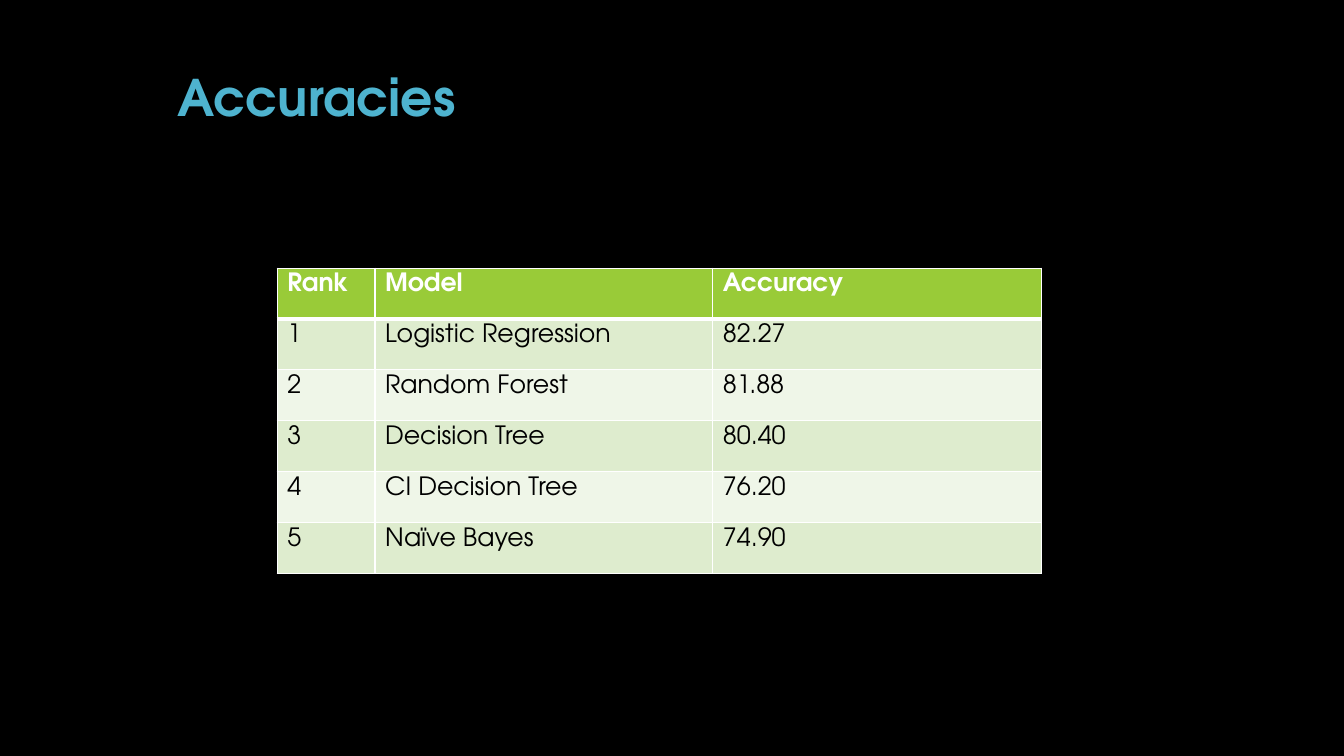
from dataclasses import dataclass

from lxml import etree
from pptx import Presentation
from pptx.dml.color import RGBColor
from pptx.enum.text import MSO_ANCHOR, PP_ALIGN
from pptx.oxml.ns import qn
from pptx.util import Inches, Pt

LEFT = PP_ALIGN.LEFT
TOP = MSO_ANCHOR.TOP
BOTTOM = MSO_ANCHOR.BOTTOM
TITLE_ONLY = 5


@dataclass(frozen=True)
class Theme:
    font: str = "TeX Gyre Adventor"
    background: str = "000000"
    title: str = "4EB3CF"
    header_fill: str = "99CB38"
    header_text: str = "FFFFFF"
    bands: tuple = ("DEECCE", "EFF6E8")
    body_text: str = "000000"
    border: str = "FFFFFF"
    title_size: int = 36
    table_size: int = 18
    thin: int = 1
    thick: int = 3


class SlideBuilder:
    def __init__(self, presentation, theme):
        self.theme = theme
        self.slide = presentation.slides.add_slide(presentation.slide_layouts[TITLE_ONLY])
        fill = self.slide.background.fill
        fill.solid()
        fill.fore_color.rgb = RGBColor.from_string(theme.background)

    def add_run(self, paragraph, text, size, color, bold):
        run = paragraph.add_run()
        run.text = text
        run.font.name = self.theme.font
        run.font.size = Pt(size)
        run.font.bold = bold
        run.font.color.rgb = RGBColor.from_string(color)

    def title(self, text, left, top, width, height):
        heading = self.slide.shapes.title
        heading.left, heading.top = Inches(left), Inches(top)
        heading.width, heading.height = Inches(width), Inches(height)
        frame = heading.text_frame
        frame.word_wrap = True
        frame.vertical_anchor = BOTTOM
        frame.margin_bottom = Inches(0.66)
        paragraph = frame.paragraphs[0]
        paragraph.alignment = LEFT
        paragraph.line_spacing = 0.9
        self.add_run(paragraph, text, self.theme.title_size, self.theme.title, True)

    def border(self, cell, side, points):
        line = etree.SubElement(cell._tc.get_or_add_tcPr(), qn(f"a:ln{side}"), w=str(Pt(points)))
        fill = etree.SubElement(line, qn("a:solidFill"))
        etree.SubElement(fill, qn("a:srgbClr"), val=self.theme.border)

    def cell(self, cell, text, row):
        theme = self.theme
        is_header = row == 0
        cell.margin_top = cell.margin_bottom = Inches(0.05)
        cell.vertical_anchor = TOP
        # Borders come before the fill in the cell properties
        for side in "LRTB":
            below_header = (is_header and side == "B") or (row == 1 and side == "T")
            self.border(cell, side, theme.thick if below_header else theme.thin)
        cell.fill.solid()
        band = theme.header_fill if is_header else theme.bands[(row - 1) % 2]
        cell.fill.fore_color.rgb = RGBColor.from_string(band)
        color = theme.header_text if is_header else theme.body_text
        paragraph = cell.text_frame.paragraphs[0]
        paragraph.alignment = LEFT
        self.add_run(paragraph, text, theme.table_size, color, is_header)

    def table(self, rows, left, top, column_widths, height):
        table = self.slide.shapes.add_table(
            len(rows), len(column_widths), Inches(left), Inches(top),
            Inches(sum(column_widths)), Inches(height)).table
        for column, width in zip(table.columns, column_widths):
            column.width = Inches(width)
        for row, values in enumerate(rows):
            table.rows[row].height = Inches(height / len(rows))
            for column, text in enumerate(values):
                self.cell(table.cell(row, column), text, row)


def main():
    presentation = Presentation()
    presentation.slide_width = Inches(13.33)
    presentation.slide_height = Inches(7.5)
    builder = SlideBuilder(presentation, Theme())

    # Heading
    builder.title("Accuracies", 1.66, 0.42, 10, 1.5)

    # Models ranked by accuracy
    results = [
        ("Logistic Regression", "82.27"),
        ("Random Forest", "81.88"),
        ("Decision Tree", "80.40"),
        ("CI Decision Tree", "76.20"),
        ("Naïve Bayes", "74.90"),
    ]
    ranking = [("Rank", "Model", "Accuracy")]
    ranking += [(str(rank), *result) for rank, result in enumerate(results, 1)]
    builder.table(ranking, 2.75, 2.66, (0.97, 3.35, 3.26), 3.03)

    presentation.save("out.pptx")


if __name__ == "__main__":
    main()
